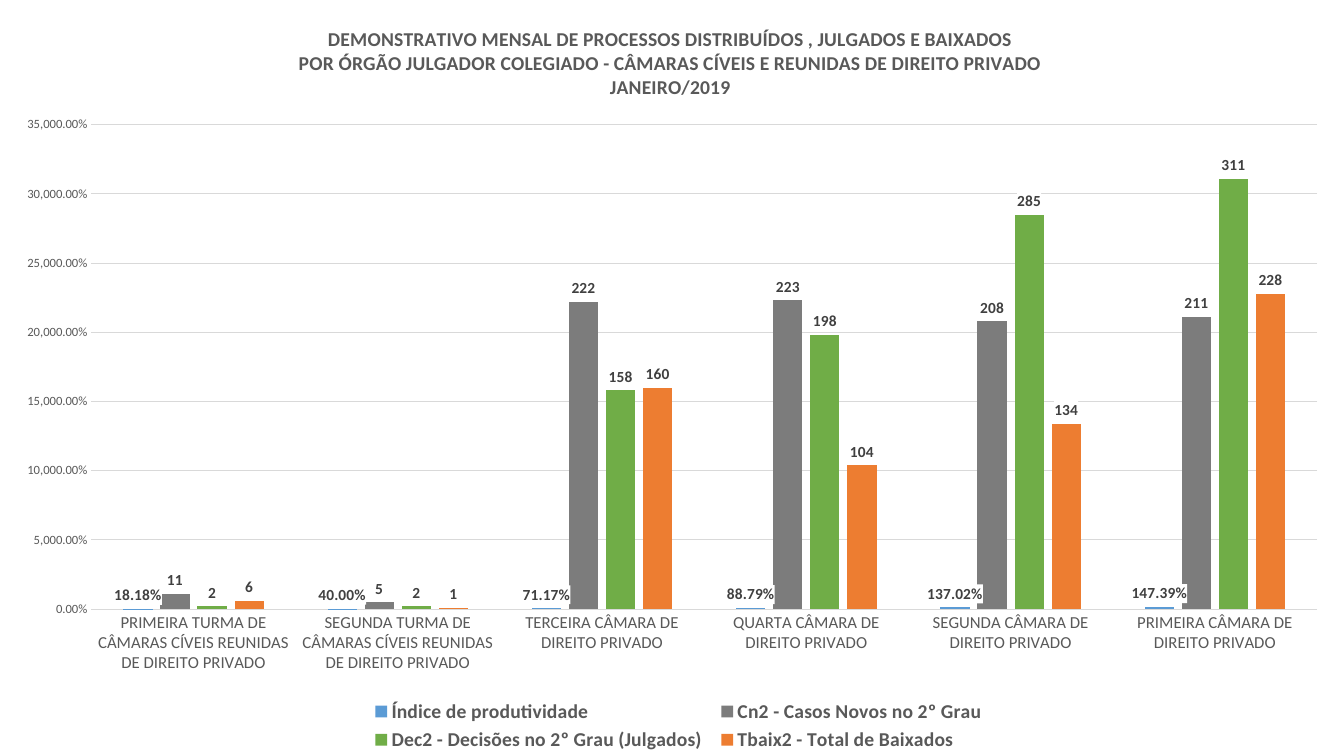
import pptx
import pptx.util
import pptx.chart.data
import pptx.dml.color
import pptx.enum.chart
import pptx.oxml
import pptx.oxml.ns

COLORS = {"text": "595959", "label": "404040", "grid": "D9D9D9", "white": "FFFFFF"}
FONT = "Calibri"
WIDTH, HEIGHT = 13.33, 7.5

TITLE_LINES = [
    "DEMONSTRATIVO MENSAL DE PROCESSOS DISTRIBUÍDOS , JULGADOS E BAIXADOS",
    "POR ÓRGÃO JULGADOR COLEGIADO - CÂMARAS CÍVEIS E REUNIDAS DE DIREITO PRIVADO",
    "JANEIRO/2019",
]
CATEGORIES = [
    "PRIMEIRA TURMA DE CÂMARAS CÍVEIS REUNIDAS DE DIREITO PRIVADO",
    "SEGUNDA TURMA DE CÂMARAS CÍVEIS REUNIDAS DE DIREITO PRIVADO",
    "TERCEIRA CÂMARA DE DIREITO PRIVADO",
    "QUARTA CÂMARA DE DIREITO PRIVADO",
    "SEGUNDA CÂMARA DE DIREITO PRIVADO",
    "PRIMEIRA CÂMARA DE DIREITO PRIVADO",
]
SERIES = [  # name, values, number format, colour
    ("Índice de produtividade", (0.1818, 0.4, 0.7117, 0.8879, 1.3702, 1.4739), "0.00%", "5B9BD5"),
    ("Cn2 - Casos Novos no 2º Grau", (11, 5, 222, 223, 208, 211), "0", "7C7C7C"),
    ("Dec2 - Decisões no 2º Grau (Julgados)", (2, 2, 158, 198, 285, 311), "0", "70AD47"),
    ("Tbaix2 - Total de Baixados", (6, 1, 160, 104, 134, 228), "0", "ED7D31"),
]


def set_font(font, size, color, bold=False):
    font.name = FONT
    font.size = pptx.util.Pt(size)
    font.bold = bold
    font.color.rgb = pptx.dml.color.RGBColor.from_string(color)


def set_layout(element, **shares):
    """Place a chart part by x, y, w and h, given as shares of the chart's size."""
    qn = pptx.oxml.ns.qn
    for old in element.findall(qn("c:layout")):
        element.remove(old)
    inner = '<c:layoutTarget val="inner"/>' if element.tag == qn("c:plotArea") else ""
    modes = "".join(f'<c:{key}Mode val="edge"/>' for key in shares if key in "xy")
    values = "".join(f'<c:{key} val="{share}"/>' for key, share in shares.items())
    layout = pptx.oxml.parse_xml(
        f'<c:layout {pptx.oxml.ns.nsdecls("c")}><c:manualLayout>'
        f"{inner}{modes}{values}</c:manualLayout></c:layout>"
    )
    overlay = element.find(qn("c:overlay"))
    if overlay is None:
        element.insert(0, layout)
    else:
        overlay.addprevious(layout)


deck = pptx.Presentation()
deck.slide_width = pptx.util.Inches(WIDTH)
deck.slide_height = pptx.util.Inches(HEIGHT)
page = deck.slides.add_slide(deck.slide_layouts[6])

# Chart
data = pptx.chart.data.CategoryChartData()
data.categories = CATEGORIES
for name, values, number_format, color in SERIES:
    data.add_series(name, values, number_format)
chart = page.shapes.add_chart(
    pptx.enum.chart.XL_CHART_TYPE.COLUMN_CLUSTERED,
    0, 0, deck.slide_width, deck.slide_height, data,
).chart
set_font(chart.font, 10, "000000")

# Title
title_frame = chart.chart_title.text_frame
for index, line in enumerate(TITLE_LINES):
    para = title_frame.add_paragraph() if index else title_frame.paragraphs[0]
    para.text = line
    set_font(para.font, 14, COLORS["text"], bold=True)
    for span in para.runs:
        set_font(span.font, 14, COLORS["text"], bold=True)
chart.chart_title.include_in_layout = False if hasattr(chart.chart_title, "include_in_layout") else None
set_layout(chart.chart_title._element, x=0.22, y=0.03)

# Columns and their labels
plot = chart.plots[0]
plot.gap_width = 219
plot.overlap = -27
plot.vary_by_categories = False
for column, (name, values, number_format, color) in zip(plot.series, SERIES):
    column.invert_if_negative = False
    column.format.fill.solid()
    column.format.fill.fore_color.rgb = pptx.dml.color.RGBColor.from_string(color)
    labels = column.data_labels
    labels.show_value = True
    labels.number_format = number_format
    labels.number_format_is_linked = False
    labels.position = pptx.enum.chart.XL_LABEL_POSITION.OUTSIDE_END
    set_font(labels.font, 11, COLORS["label"], bold=True)
    labels._element.find(pptx.oxml.ns.qn("c:txPr")).addprevious(pptx.oxml.parse_xml(
        f'<c:spPr {pptx.oxml.ns.nsdecls("c", "a")}><a:solidFill>'
        f'<a:srgbClr val="{COLORS["white"]}"/></a:solidFill></c:spPr>'
    ))

# Axes
grid_color = pptx.dml.color.RGBColor.from_string(COLORS["grid"])
value_axis = chart.value_axis
value_axis.minimum_scale, value_axis.maximum_scale, value_axis.major_unit = 0, 350, 50
value_axis.tick_labels.number_format = "#,##0.00%"
value_axis.tick_labels.number_format_is_linked = False
value_axis.has_major_gridlines = True
for axis, size in ((chart.category_axis, 12), (value_axis, 9)):
    axis.major_tick_mark = pptx.enum.chart.XL_TICK_MARK.NONE
    set_font(axis.tick_labels.font, size, COLORS["text"])
for line_format in (chart.category_axis.format.line, value_axis.major_gridlines.format.line):
    line_format.color.rgb = grid_color
    line_format.width = pptx.util.Pt(0.75)
value_axis.format.line.fill.background()
set_layout(chart._chartSpace.chart.plotArea, x=0.068, y=0.165, w=0.912, h=0.641)

# Legend
chart.has_legend = True
chart.legend.position = pptx.enum.chart.XL_LEGEND_POSITION.BOTTOM
chart.legend.include_in_layout = False
set_font(chart.legend.font, 14, COLORS["text"], bold=True)
set_layout(chart.legend._element, x=0.27, y=0.92, w=0.47, h=0.08)

deck.save("out.pptx")
